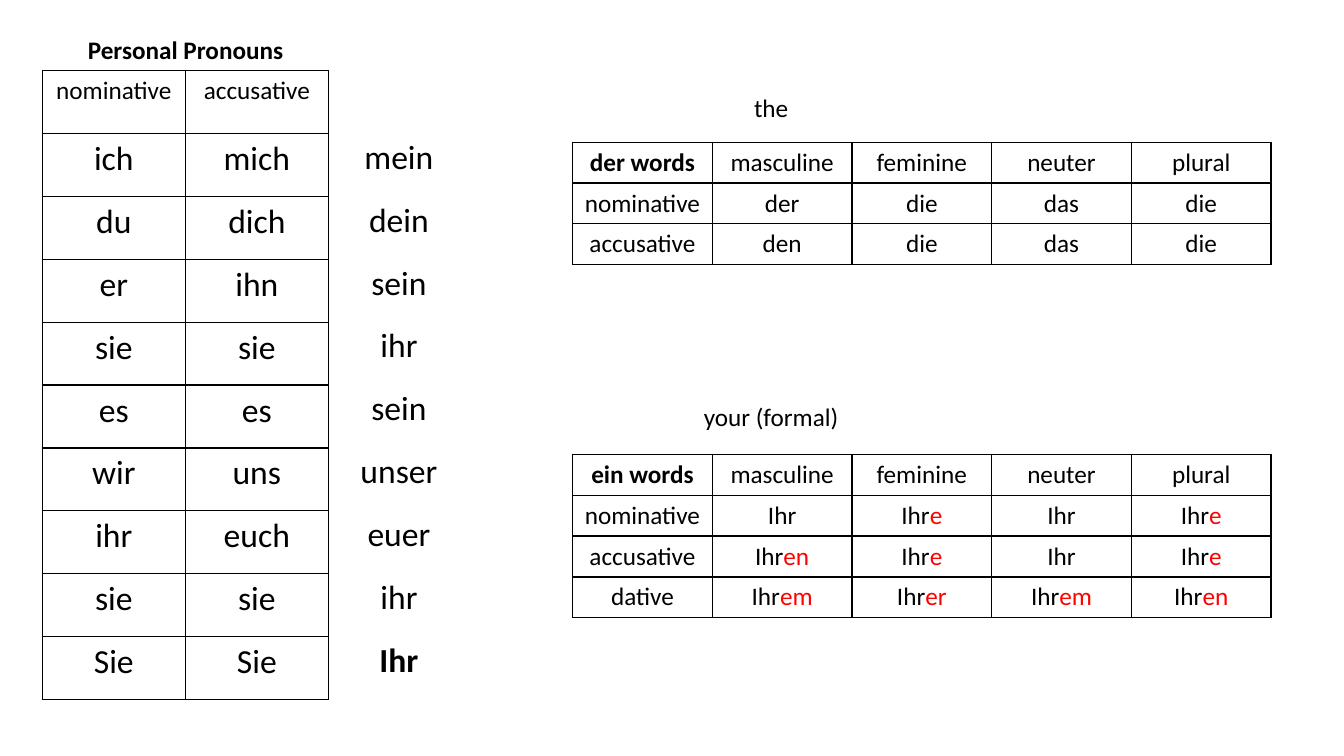
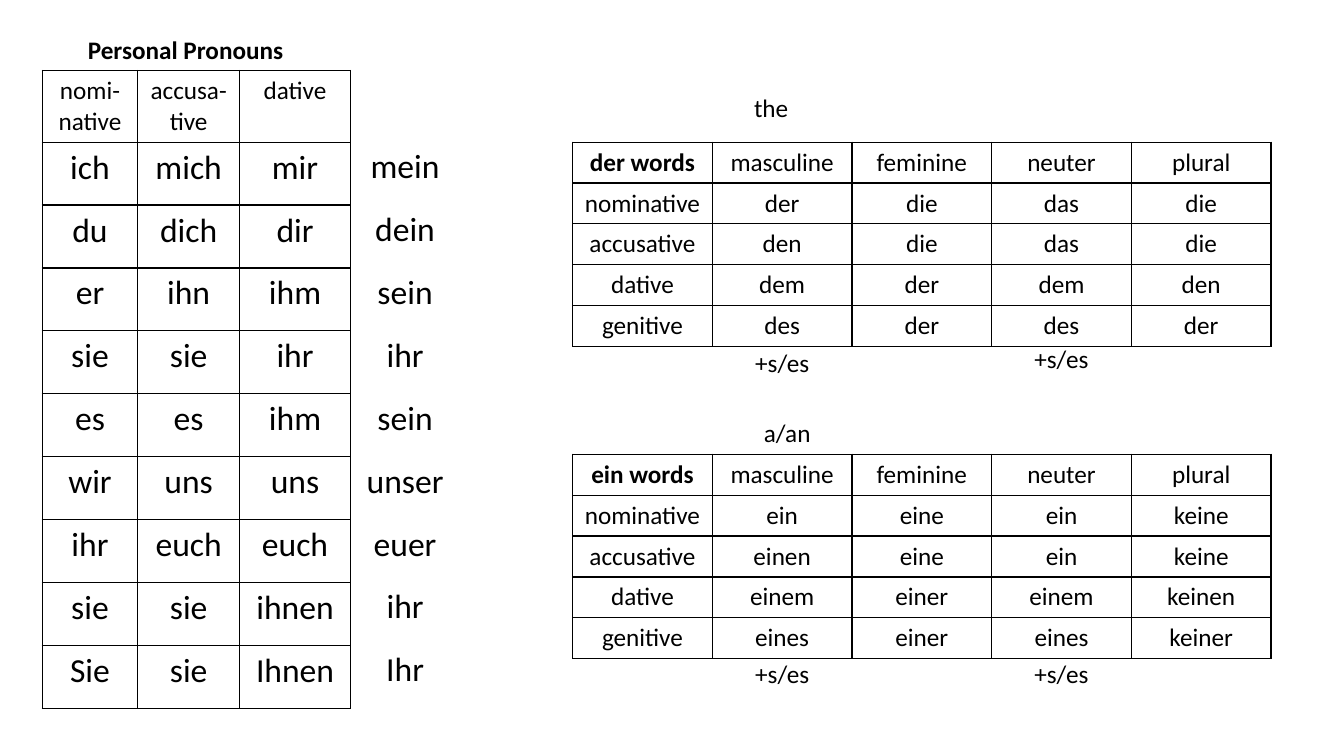
from dataclasses import dataclass

from lxml import etree
from pptx import Presentation
from pptx.dml.color import RGBColor
from pptx.enum.text import MSO_ANCHOR, MSO_AUTO_SIZE, PP_ALIGN
from pptx.oxml.ns import qn
from pptx.util import Pt

CENTER = PP_ALIGN.CENTER
TOP = MSO_ANCHOR.TOP
NO_FIT = MSO_AUTO_SIZE.NONE
TITLE_ONLY = 5

COLORS = {"text": "000000", "ending": "FF0000", "border": "000000"}
FONT = "Calibri"
SMALL, LARGE = 18, 24
LABEL_W, LABEL_H = 198.7, 29
WORD_X, DER_Y, EIN_Y = 409, 101.5, 324.5
WORD_COLS, WORD_ROW = (99.8,) * 5, 29.2
PRONOUN_X, PRONOUN_Y, PRONOUN_ROW = 30.2, 50.4, 44.95
GENDERS = "masculine,feminine,neuter,plural"


@dataclass
class Label:
    text: str
    x: float
    y: float


@dataclass
class Grid:
    """Rows hold comma-separated cells; a bar in a cell starts a red ending."""
    rows: list[str]
    x: float
    y: float
    cols: tuple[float, ...]
    row_h: float
    size: int
    header_h: float | None = None
    header_size: int | None = None
    bold: tuple[int, int] | None = None
    border: bool = True


@dataclass
class Page:
    grids: list[Grid]
    labels: list[Label]


def word_grid(name: str, y: float, rows: list[str]) -> Grid:
    return Grid([f"{name},{GENDERS}"] + rows, WORD_X, y, WORD_COLS, WORD_ROW,
                SMALL, bold=(0, 0))


def pronoun_grid(rows: list[str], cols: tuple[float, ...], header_h: float) -> Grid:
    return Grid(rows, PRONOUN_X, PRONOUN_Y, cols, PRONOUN_ROW, LARGE,
                header_h=header_h, header_size=SMALL)


def possessive_grid(x: float, y: float, bold: tuple[int, int] | None = None) -> Grid:
    rows = ["mein", "dein", "sein", "ihr", "sein", "unser", "euer", "ihr", "Ihr"]
    return Grid(rows, x, y, (90.7,), PRONOUN_ROW, LARGE, bold=bold, border=False)


def write(tf, text: str, size: int, bold: bool = False) -> None:
    p = tf.paragraphs[0]
    p.alignment = CENTER
    for part, color in zip(text.split("|"), ("text", "ending")):
        r = p.add_run()
        r.text = part
        for name, value in {"name": FONT, "size": Pt(size), "bold": bold}.items():
            setattr(r.font, name, value)
        r.font.color.rgb = RGBColor.from_string(COLORS[color])


def set_borders(cell, visible: bool) -> None:
    tc_pr = cell._tc.get_or_add_tcPr()
    for i, side in enumerate(("lnL", "lnR", "lnT", "lnB")):
        ln = etree.Element(qn(f"a:{side}"), w=str(Pt(1)))
        if visible:
            fill = etree.SubElement(ln, qn("a:solidFill"))
            etree.SubElement(fill, qn("a:srgbClr"), val=COLORS["border"])
        else:
            etree.SubElement(ln, qn("a:noFill"))
        tc_pr.insert(i, ln)


def add_grid(s, g: Grid) -> None:
    header_h = g.header_h or g.row_h
    height = header_h + g.row_h * (len(g.rows) - 1)
    table = s.shapes.add_table(len(g.rows), len(g.cols), Pt(g.x), Pt(g.y),
                               Pt(sum(g.cols)), Pt(height)).table
    table.first_row = table.horz_banding = False
    for col, width in zip(table.columns, g.cols):
        col.width = Pt(width)
    for i, row in enumerate(g.rows):
        table.rows[i].height = Pt(g.row_h if i else header_h)
        size = g.size if i else g.header_size or g.size
        for j, text in enumerate(row.split(",")):
            cell = table.cell(i, j)
            cell.fill.background()
            set_borders(cell, g.border)
            write(cell.text_frame, text, size, (i, j) == g.bold)


def place_label(sp, label: Label, bold: bool = False) -> None:
    sp.left, sp.top = Pt(label.x), Pt(label.y)
    sp.width, sp.height = Pt(LABEL_W), Pt(LABEL_H)
    tf = sp.text_frame
    for name, value in {"word_wrap": True, "auto_size": NO_FIT,
                        "vertical_anchor": TOP}.items():
        setattr(tf, name, value)
    write(tf, label.text, SMALL, bold)
    tf.paragraphs[0].line_spacing = 1.0


TITLE = Label("Personal Pronouns", 33.2, 21)
THE = Label("the", 451.5, 62.6)
DER_ROWS = ["nominative,der,die,das,die", "accusative,den,die,das,die"]

PAGES = [
    Page(
        [
            word_grid("ein words", EIN_Y, [
                "nominative,Ihr,Ihr|e,Ihr,Ihr|e",
                "accusative,Ihr|en,Ihr|e,Ihr,Ihr|e",
                "dative,Ihr|em,Ihr|er,Ihr|em,Ihr|en",
            ]),
            word_grid("der words", DER_Y, DER_ROWS),
            pronoun_grid([
                "nominative,accusative", "ich,mich", "du,dich", "er,ihn", "sie,sie",
                "es,es", "wir,uns", "ihr,euch", "sie,sie", "Sie,Sie",
            ], (102.2, 102.2), PRONOUN_ROW),
            possessive_grid(239.6, 94.5, bold=(8, 0)),
        ],
        [THE, Label("your (formal)", 451.5, 283)],
    ),
    Page(
        [
            word_grid("ein words", EIN_Y, [
                "nominative,ein,eine,ein,keine",
                "accusative,einen,eine,ein,keine",
                "dative,einem,einer,einem,keinen",
                "genitive,eines,einer,eines,keiner",
            ]),
            word_grid("der words", DER_Y, DER_ROWS + [
                "dative,dem,der,dem,den", "genitive,des,der,des,der",
            ]),
            pronoun_grid([
                "nomi- native,accusa-tive,dative", "ich,mich,mir", "du,dich,dir",
                "er,ihn,ihm", "sie,sie,ihr", "es,es,ihm", "wir,uns,uns",
                "ihr,euch,euch", "sie,sie,ihnen", "Sie,sie,Ihnen",
            ], (68.2, 72.8, 79.2), 51),
            possessive_grid(244, 101.2),
        ],
        [THE, Label("a/an", 463, 294.5)]
        + [Label("+s/es", x, y) for x, y in
           ((459.4, 244.8), (658.8, 242), (459.4, 466.6), (658.8, 466.6))],
    ),
]


def main() -> None:
    prs = Presentation()
    prs.slide_width, prs.slide_height = Pt(960), Pt(540)
    for page in PAGES:
        s = prs.slides.add_slide(prs.slide_layouts[TITLE_ONLY])
        place_label(s.shapes.title, TITLE, bold=True)
        for grid in page.grids:
            add_grid(s, grid)
        for label in page.labels:
            place_label(s.shapes.add_textbox(0, 0, 0, 0), label)
    prs.save("out.pptx")


if __name__ == "__main__":
    main()
